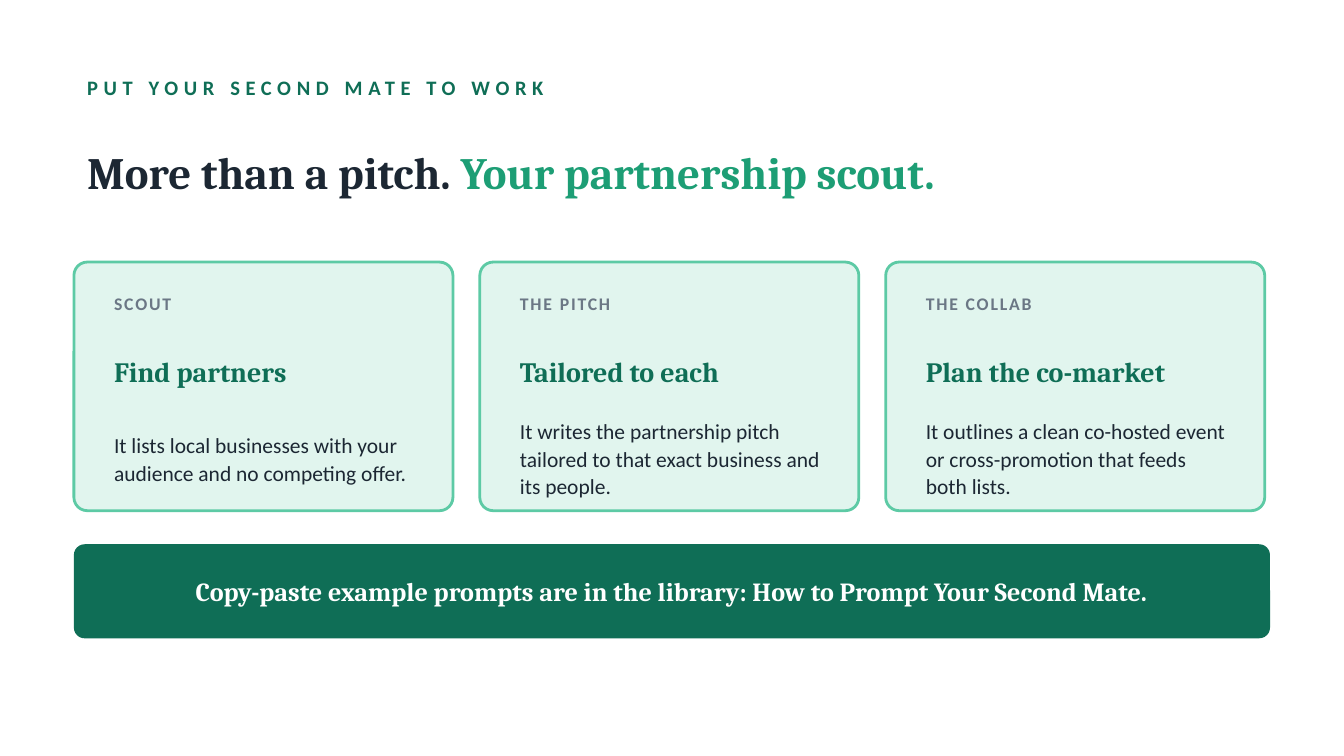
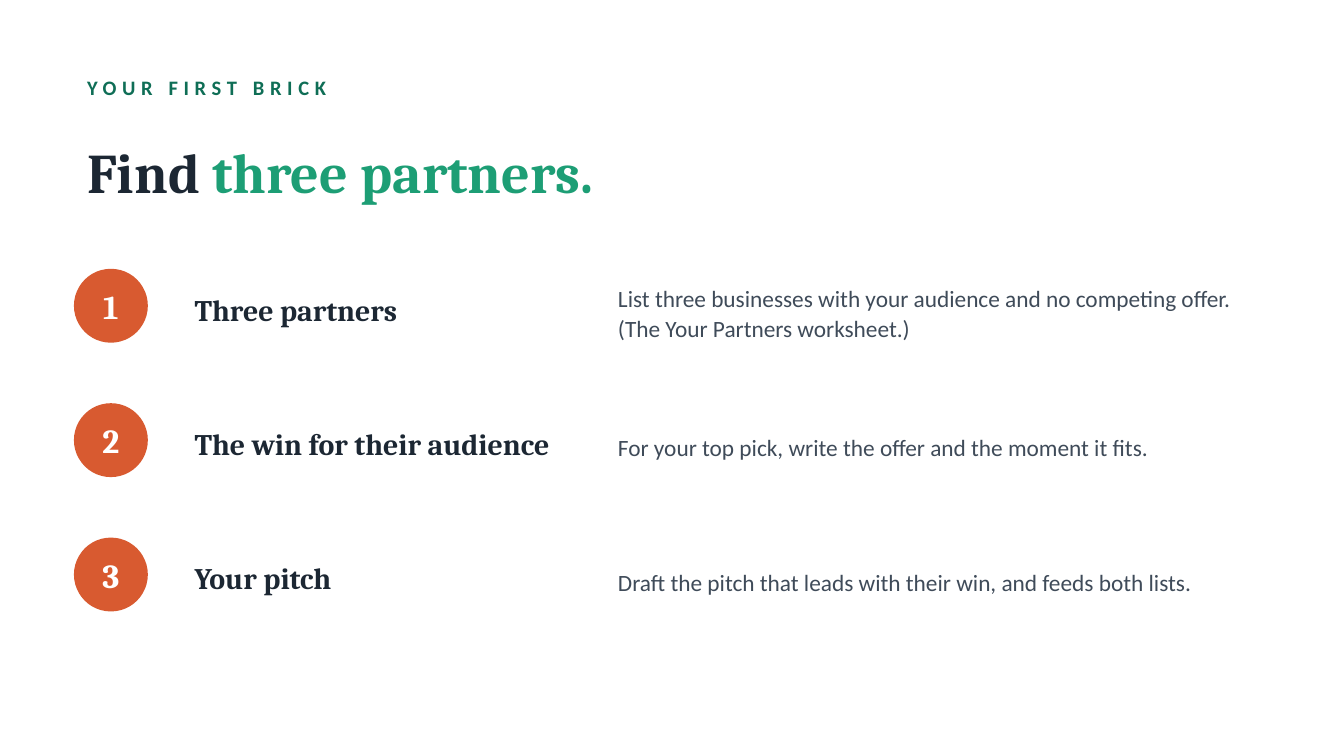
"""Build two slides about scouting and pitching local business partners."""
from pptx import Presentation
from pptx.dml.color import RGBColor
from pptx.enum.shapes import MSO_SHAPE
from pptx.enum.text import MSO_ANCHOR, PP_ALIGN
from pptx.util import Inches, Pt

ROUND, OVAL = MSO_SHAPE.ROUNDED_RECTANGLE, MSO_SHAPE.OVAL
MIDDLE = MSO_ANCHOR.MIDDLE
LEFT, CENTER = PP_ALIGN.LEFT, PP_ALIGN.CENTER

COLORS = {
    "white": "FFFFFF", "ink": "1C2733", "slate": "3F4B59", "gray": "6B7785",
    "forest": "0F6E56", "green": "1D9E75", "mint": "5DCAA5", "pale": "E1F5EE",
    "orange": "D85A30",
}
HEAD, BODY = "Cambria", "Calibri"
STYLES = {
    "kicker": {"name": BODY, "size": 11, "color": "forest", "bold": True, "spc": 3},
    "title": {"name": HEAD, "size": 24, "color": "ink", "bold": True},
    "label": {"name": BODY, "size": 9.5, "color": "gray", "bold": True, "spc": 1},
    "card": {"name": HEAD, "size": 15, "color": "forest", "bold": True},
    "card_body": {"name": BODY, "size": 11.5, "color": "ink"},
    "banner": {"name": HEAD, "size": 14, "color": "white", "bold": True},
    "number": {"name": HEAD, "size": 18, "color": "white", "bold": True},
    "step": {"name": HEAD, "size": 16, "color": "ink", "bold": True},
    "step_body": {"name": BODY, "size": 12.5, "color": "slate"},
}
MARGIN, WIDTH = 0.55, 8.9

CARDS = [
    ("SCOUT", "Find partners",
     "It lists local businesses with your audience and no competing offer."),
    ("THE PITCH", "Tailored to each",
     "It writes the partnership pitch tailored to that exact business and its people."),
    ("THE COLLAB", "Plan the co-market",
     "It outlines a clean co-hosted event or cross-promotion that feeds both lists."),
]
STEPS = [
    ("Three partners",
     "List three businesses with your audience and no competing offer. "
     "(The Your Partners worksheet.)"),
    ("The win for their audience",
     "For your top pick, write the offer and the moment it fits."),
    ("Your pitch",
     "Draft the pitch that leads with their win, and feeds both lists."),
]


def rgb(name):
    """Return the palette colour with this name."""
    return RGBColor.from_string(COLORS[name])


class Deck:
    """Holds the presentation, its style and the current slide."""

    def __init__(self):
        """Start an empty 16:9 presentation."""
        self.prs = Presentation()
        self.prs.slide_width = Inches(10)
        self.prs.slide_height = Inches(10 * 9 / 16)
        self.s = None

    def slide(self, kicker, lead, accent, size):
        """Add a slide with its kicker and two-colour title."""
        self.s = self.prs.slides.add_slide(self.prs.slide_layouts[6])
        fill = self.s.background.fill
        fill.solid()
        fill.fore_color.rgb = rgb("white")
        self.text((MARGIN, 0.5, WIDTH, 0.3), kicker, "kicker")
        p = self.text((MARGIN, 0.85, WIDTH, 0.85), lead, "title", size=size)
        self.run(p, accent, "title", size=size, color="green")

    def run(self, p, text, style, **changes):
        """Add a run in a named style, with any changes to it."""
        r = p.add_run()
        r.text = text
        look = {**STYLES[style], **changes}
        color, spacing = look.pop("color"), look.pop("spc", None)
        look["size"] = Pt(look["size"])
        for key, value in look.items():
            setattr(r.font, key, value)
        r.font.color.rgb = rgb(color)
        if spacing:
            r.font._element.set("spc", str(spacing * 100))

    def text(self, box, text, style, align=LEFT, spacing=None, **changes):
        """Add a vertically centred text box and return its paragraph."""
        tf = self.s.shapes.add_textbox(*map(Inches, box)).text_frame
        tf.word_wrap, tf.vertical_anchor = True, MIDDLE
        p = tf.paragraphs[0]
        p.alignment, p.line_spacing = align, spacing
        self.run(p, text, style, **changes)
        return p

    def shape(self, kind, box, fill, line=None, radius=None):
        """Add a filled preset shape, with an optional outline and corner radius."""
        sp = self.s.shapes.add_shape(kind, *map(Inches, box))
        sp.shadow.inherit = False
        sp.fill.solid()
        sp.fill.fore_color.rgb = rgb(fill)
        if line:
            sp.line.color.rgb = rgb(line)
            sp.line.width = Pt(1.5)
        else:
            sp.line.fill.background()
        if radius:
            sp.adjustments[0] = radius / min(box[2:])

    def card(self, x, label, heading, body):
        """Add an outlined card with label, heading and body."""
        self.shape(ROUND, (x, 1.95, 2.82, 1.85), "pale", "mint", radius=0.1)
        left, width = x + 0.2, 2.45
        self.text((left, 2.11, width, 0.3), label, "label")
        self.text((left, 2.41, width, 0.7), heading, "card")
        self.text((left, 3.13, width, 0.55), body, "card_body", spacing=1.08)

    def banner(self, text):
        """Add the full-width banner."""
        self.shape(ROUND, (MARGIN, 4.05, WIDTH, 0.7), "forest", radius=0.08)
        self.text((0.8, 4.05, 8.4, 0.7), text, "banner", CENTER)

    def step(self, y, number, heading, body):
        """Add a numbered step row."""
        circle = (MARGIN, y, 0.55, 0.55)
        self.shape(OVAL, circle, "orange")
        self.text(circle, str(number), "number", CENTER)
        self.text((1.35, y - 0.05, 3, 0.7), heading, "step")
        self.text((4.5, y - 0.05, 5, 0.75), body, "step_body", spacing=1.05)


def main():
    """Build and save both slides."""
    deck = Deck()
    deck.slide("PUT YOUR SECOND MATE TO WORK",
               "More than a pitch. ", "Your partnership scout.", 24)
    for i, card in enumerate(CARDS):
        deck.card(MARGIN + 3.02 * i, *card)
    deck.banner("Copy-paste example prompts are in the library: "
                "How to Prompt Your Second Mate.")

    deck.slide("YOUR FIRST BRICK", "Find ", "three partners.", 30)
    for number, step in enumerate(STEPS, 1):
        deck.step(1 + number, number, *step)
    deck.prs.save("out.pptx")


if __name__ == "__main__":
    main()
